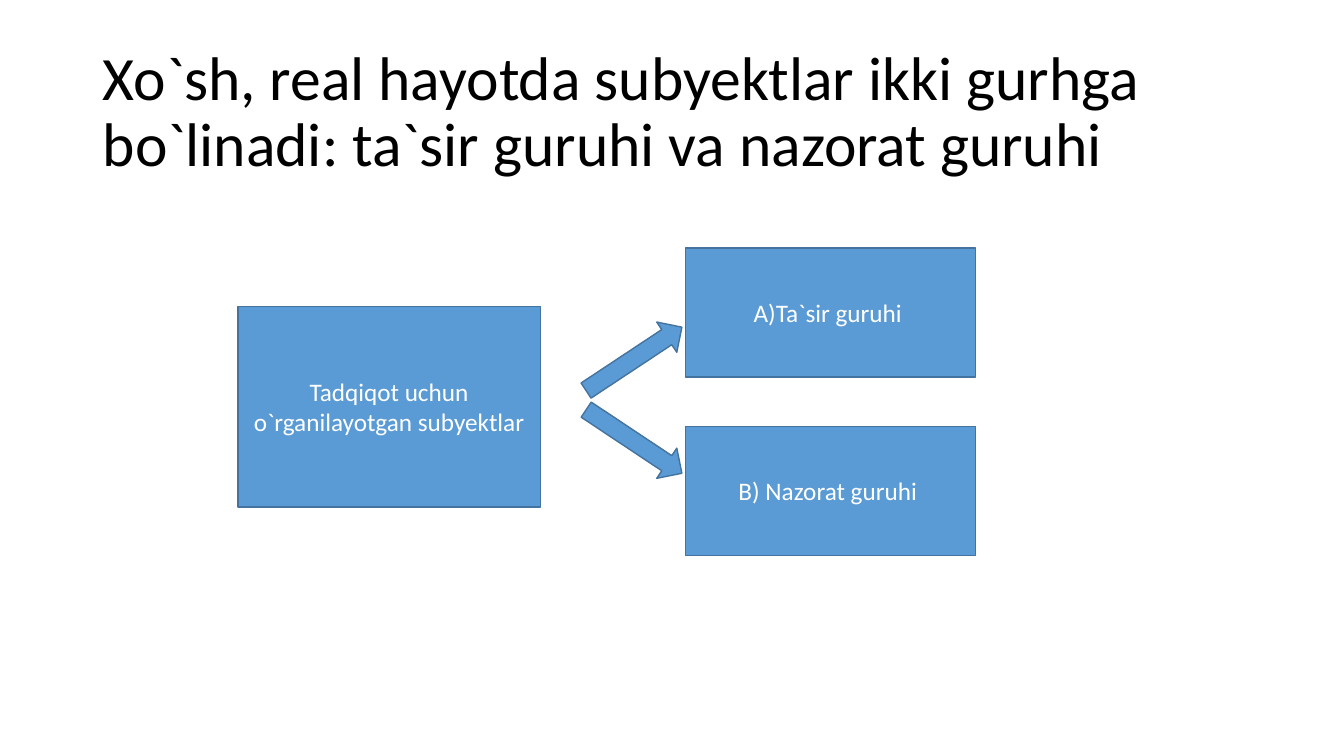
from dataclasses import dataclass

from pptx import Presentation
from pptx.dml.color import RGBColor
from pptx.enum.shapes import MSO_SHAPE
from pptx.enum.text import MSO_ANCHOR, MSO_AUTO_SIZE, PP_ALIGN
from pptx.util import Inches, Pt

RECT, ARROW = MSO_SHAPE.RECTANGLE, MSO_SHAPE.RIGHT_ARROW
MIDDLE, FIXED = MSO_ANCHOR.MIDDLE, MSO_AUTO_SIZE.NONE
LEFT, CENTER = PP_ALIGN.LEFT, PP_ALIGN.CENTER
WIDE, HIGH = Inches(13.33), Inches(7.5)
FONT, BLACK, WHITE, BLUE, EDGE = "Calibri", "000000", "FFFFFF", "5B9BD5", "43739E"
TITLE = "Xo`sh, real hayotda subyektlar ikki gurhga bo`linadi: ta`sir guruhi va nazorat guruhi"


@dataclass
class Area:
    """Place and size in percent of the slide."""
    left: float
    top: float
    width: float
    height: float


@dataclass
class Block:
    """A filled shape with its label and turn."""
    kind: int
    area: Area
    label: str = ""
    turn: float = 0


def group(top: float, label: str) -> Block:
    """Give a group box in the right column."""
    return Block(RECT, Area(51, top, 21.6, 17.07), label)


def arrow(top: float, turn: float) -> Block:
    """Give an arrow in the middle column."""
    return Block(ARROW, Area(42.9, top, 8.55, 4.8), turn=turn)


BLOCKS = [
    Block(RECT, Area(17.7, 40.53, 22.5, 26.53), "Tadqiqot uchun o`rganilayotgan subyektlar"),
    arrow(45.07, 326.5),
    arrow(56, 33.6),
    group(32.8, "A)Ta`sir guruhi "),
    group(56.4, "B) Nazorat guruhi "),
]


def paint(code: str) -> RGBColor:
    """Turn a hex string into a colour."""
    return RGBColor.from_string(code)


def apply(item, values: dict) -> None:
    """Set each named value on the item."""
    for name, value in values.items():
        setattr(item, name, value)


def place(area: Area) -> dict:
    """Turn percent into slide lengths."""
    return {
        "left": round(WIDE * area.left / 100),
        "top": round(HIGH * area.top / 100),
        "width": round(WIDE * area.width / 100),
        "height": round(HIGH * area.height / 100),
    }


def write(shape, text: str, size: int, color: str, align: int, space: float) -> None:
    """Fill a shape with one formatted paragraph."""
    frame = shape.text_frame
    apply(frame, {"text": text, "word_wrap": True, "auto_size": FIXED, "vertical_anchor": MIDDLE})
    line = frame.paragraphs[0]
    apply(line, {"alignment": align, "line_spacing": space})
    font = line.runs[0].font
    apply(font, {"name": FONT, "size": Pt(size)})
    font.color.rgb = paint(color)


def draw(slide, block: Block) -> None:
    """Draw one block on the slide."""
    shape = slide.shapes.add_shape(block.kind, **place(block.area))
    shape.rotation = block.turn
    shape.shadow.inherit = False
    shape.fill.solid()
    shape.fill.fore_color.rgb = paint(BLUE)
    shape.line.color.rgb = paint(EDGE)
    shape.line.width = Pt(1)
    if block.label:
        write(shape, block.label, 18, WHITE, CENTER, 1.0)


def main() -> None:
    """Build and save the slide."""
    deck = Presentation()
    apply(deck, {"slide_width": WIDE, "slide_height": HIGH})
    slide = deck.slides.add_slide(deck.slide_layouts[5])
    title = slide.shapes.title
    apply(title, place(Area(6.9, 5.33, 86.25, 19.33)))
    write(title, TITLE, 44, BLACK, LEFT, 0.9)
    for block in BLOCKS:
        draw(slide, block)
    deck.save("out.pptx")


if __name__ == "__main__":
    main()
